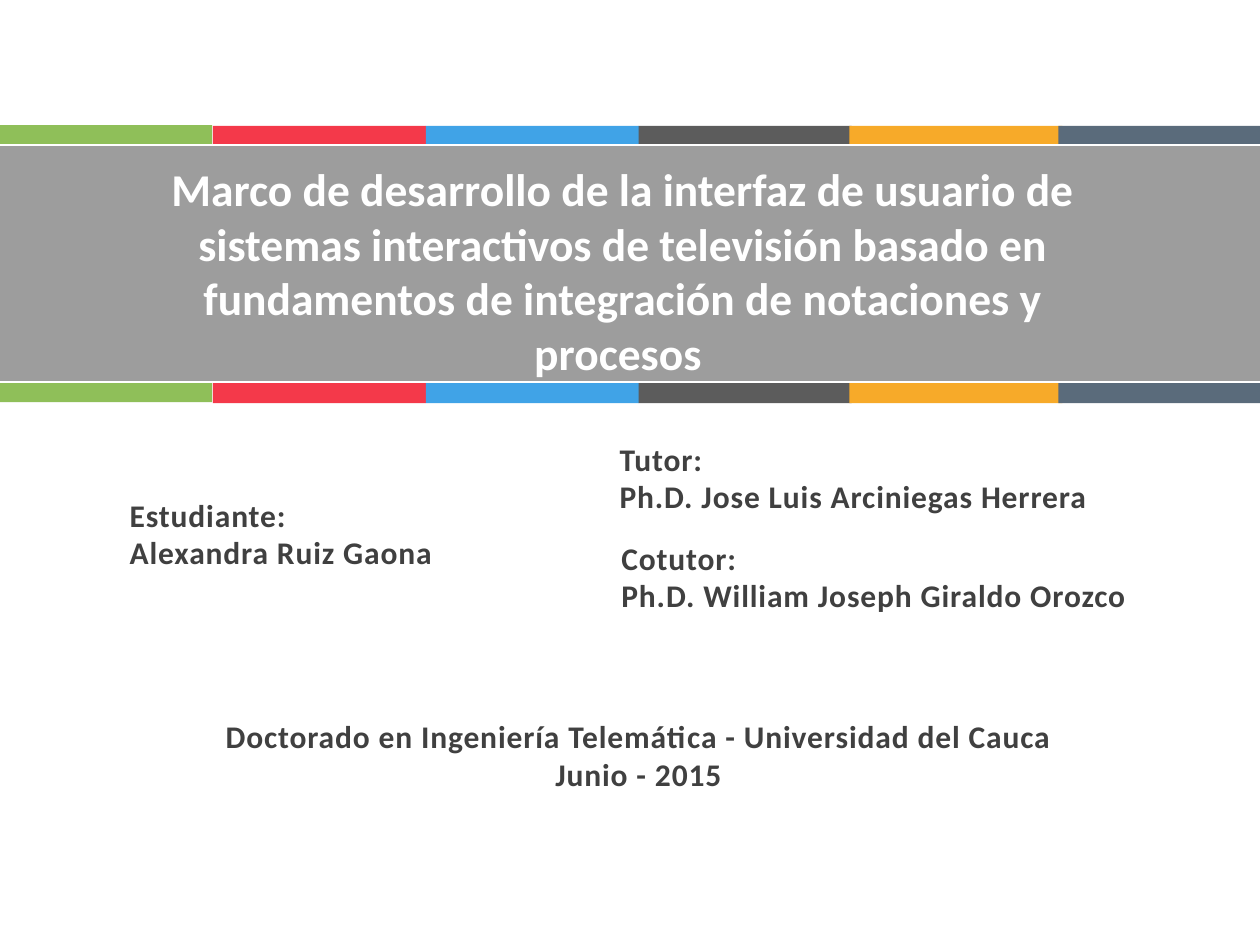
from pptx import Presentation
from pptx.dml.color import RGBColor
from pptx.enum import shapes, text
from pptx.util import Pt

WHITE = RGBColor(0xFF, 0xFF, 0xFF)
GREY = RGBColor(0x9D, 0x9D, 0x9D)
DARK = RGBColor(0x40, 0x40, 0x40)
GREEN = RGBColor(0x8F, 0xBF, 0x59)
RED = RGBColor(0xF4, 0x39, 0x4A)
BLUE = RGBColor(0x40, 0xA3, 0xE7)
CHARCOAL = RGBColor(0x5C, 0x5C, 0x5C)
ORANGE = RGBColor(0xF7, 0xAA, 0x29)
SLATE = RGBColor(0x5A, 0x6B, 0x7B)

# Left edge, top offset and colour of each bar behind the title band
BARS = [(-0.5, -0.5, GREEN), (121.7, 0, RED), (243.4, 0, BLUE),
        (365, 0, CHARCOAL), (485.4, 0, ORANGE), (604.8, 0, SLATE)]
BAR_WIDTH = 121.7


def add_rect(s, x, y, w, h, fill, line=None):
    sp = s.shapes.add_shape(shapes.MSO_SHAPE.RECTANGLE, Pt(x), Pt(y), Pt(w), Pt(h))
    sp.shadow.inherit = False
    sp.fill.solid()
    sp.fill.fore_color.rgb = fill
    if line is None:
        sp.line.fill.background()
    else:
        sp.line.color.rgb = line
        sp.line.width = Pt(1.5)


def add_text(s, x, y, w, h, lines, size=18, color=DARK, spacing=0.5,
             align=text.PP_ALIGN.LEFT):
    tf = s.shapes.add_textbox(Pt(x), Pt(y), Pt(w), Pt(h)).text_frame
    tf.word_wrap = True
    tf.auto_size = text.MSO_AUTO_SIZE.SHAPE_TO_FIT_TEXT
    tf.text = "\n".join(lines)
    for p in tf.paragraphs:
        p.alignment = align
        p.font.name = "Calibri"
        p.font.size = Pt(size)
        p.font.bold = True
        p.font.color.rgb = color
        # Letter spacing, in hundredths of a point
        p._p.get_or_add_pPr().get_or_add_defRPr().set("spc", str(int(spacing * 100)))


def title_banner(s, x, y, w, h):
    # Coloured bars showing above and below the band
    for left, offset, color in BARS:
        add_rect(s, x + left, y + offset, BAR_WIDTH, h, color)
    # Title band
    add_rect(s, x - 2.9, y + 10.8, w + 7.9, h - 23, GREY, WHITE)
    add_text(s, x + 75.6, y + 16.6, 560.9, 133.2,
             ["Marco de desarrollo de la interfaz de usuario de sistemas "
              "interactivos de televisión basado en fundamentos de "
              "integración de notaciones y procesos "],
             size=26, color=WHITE, spacing=0, align=text.PP_ALIGN.CENTER)


def people(s, x, y):
    # Student on the left, tutors on the right
    add_text(s, x, y + 32, 252.7, 51, ["Estudiante:", "Alexandra Ruiz Gaona"])
    add_text(s, x + 280, y, 304, 51,
             ["Tutor:", "Ph.D. Jose Luis Arciniegas Herrera"])
    add_text(s, x + 281, y + 56.5, 304, 51,
             ["Cotutor:", "Ph.D. William Joseph Giraldo Orozco"])


def programme(s, x, y, w, h):
    add_text(s, x, y, w, h,
             ["Doctorado en Ingeniería Telemática - Universidad del Cauca ",
              "Junio - 2015 "], align=text.PP_ALIGN.CENTER)


def main():
    prs = Presentation()
    prs.slide_width, prs.slide_height = Pt(720), Pt(540)
    s = prs.slides.add_slide(prs.slide_layouts[6])
    people(s, 67, 247.7)
    title_banner(s, 0, 72, 720, 158.4)
    programme(s, 28.8, 406, 676.8, 51)
    prs.save("out.pptx")


if __name__ == "__main__":
    main()
